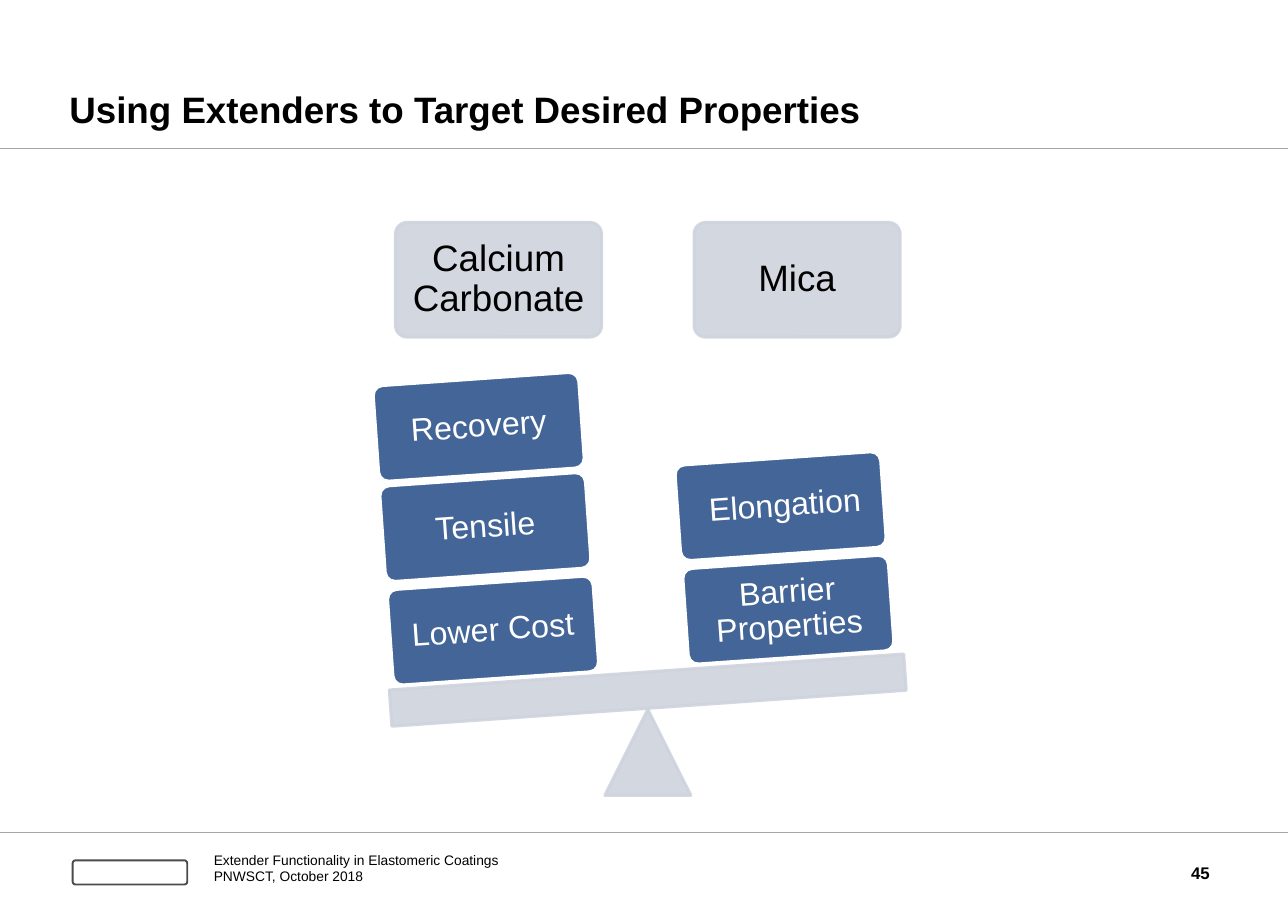
"""Build the slide that weighs two extenders on a tilted seesaw."""
from dataclasses import dataclass

from lxml import etree
from pptx import Presentation, util as u
from pptx.dml.color import RGBColor
from pptx.enum import shapes, text
from pptx.oxml.ns import qn

HUES = {"ink": "000000", "white": "FFFFFF", "pale": "CFD3DD",
        "blue": "436597", "rule": "A6A6A6", "mark": "4B4B4D"}
KIND = shapes.MSO_SHAPE
ALIGN = text.PP_ALIGN
ANCHOR = text.MSO_ANCHOR
TILT = 356


@dataclass
class Block:
    left: float
    top: float
    width: float
    height: float
    kind: int = KIND.ROUNDED_RECTANGLE
    fill: str = "pale"
    edge: str = "pale"
    weight: float = 2
    alpha: int = 100
    turn: float = 0
    round: float = 0.1
    words: str = ""
    size: float = 24
    ink: str = "ink"
    pad: float = 0.1
    shift: float = 0


@dataclass
class Rule:
    top: float
    weight: float


def hue(name: str) -> RGBColor:
    return RGBColor.from_string(HUES[name])


def fade(node, alpha: int) -> None:
    for color in node.iter(qn("a:srgbClr")):
        etree.SubElement(color, qn("a:alpha"), val=str(alpha * 1000))


def write(shape, words: str, *, size: float, ink: str = "ink", bold: bool = False,
          align=ALIGN.LEFT, anchor=ANCHOR.MIDDLE, pad: float = 0,
          shift: float = 0, space=None) -> None:
    frame = shape.text_frame
    frame.word_wrap = True
    frame.vertical_anchor = anchor
    frame.margin_left = u.Inches(pad + shift)
    frame.margin_top = frame.margin_right = frame.margin_bottom = u.Inches(pad)
    for num, line in enumerate(words.split("\n")):
        para = frame.add_paragraph() if num else frame.paragraphs[0]
        para.alignment = align
        if space:
            para.line_spacing = space
        run = para.add_run()
        run.text = line
        run.font.name = "Arial"
        run.font.size = u.Pt(size)
        run.font.bold = bold
        run.font.color.rgb = hue(ink)


def label(slide, left: float, top: float, width: float, height: float,
          words: str, **style) -> None:
    box = slide.shapes.add_textbox(*map(u.Inches, (left, top, width, height)))
    write(box, words, **style)


def draw(slide, block: Block) -> None:
    area = block.left, block.top, block.width, block.height
    shape = slide.shapes.add_shape(block.kind, *map(u.Inches, area))
    shape.shadow.inherit = False
    shape.rotation = block.turn
    if block.kind == KIND.ROUNDED_RECTANGLE:
        shape.adjustments[0] = block.round
    shape.fill.solid()
    shape.fill.fore_color.rgb = hue(block.fill)
    shape.line.color.rgb = hue(block.edge)
    shape.line.width = u.Pt(block.weight)
    if block.alpha < 100:
        fade(shape.element.spPr, block.alpha)
    if block.words:
        write(shape, block.words, size=block.size, ink=block.ink, align=ALIGN.CENTER,
              pad=block.pad, shift=block.shift, space=0.9)


def rule(slide, line: Rule, width: int) -> None:
    top = u.Inches(line.top)
    link = slide.shapes.add_connector(shapes.MSO_CONNECTOR.STRAIGHT, 0, top, width, top)
    link.line.color.rgb = hue("rule")
    link.line.width = u.Pt(line.weight)
    etree.SubElement(link.element.spPr, qn("a:effectLst"))


def head(left: float, words: str) -> Block:
    return Block(left, 2.02, 1.87, 1.04, alpha=90, words=words)


def weight(left: float, top: float, words: str, shift: float = 0) -> Block:
    return Block(left, top, 1.87, 0.87, fill="blue", edge="white", turn=TILT,
                 words=words, size=21, ink="white", pad=0.11, shift=shift)


RULES = [Rule(1.35, 0.75), Rule(7.56, 0.5)]
BLOCKS = [
    Block(0.66, 7.81, 1.04, 0.22, fill="white", edge="mark", weight=1.25, round=0.12),
    head(3.59, "Calcium Carbonate"),
    head(6.3, "Mica"),
    Block(5.49, 6.44, 0.78, 0.78, KIND.ISOSCELES_TRIANGLE, alpha=90),
    Block(3.54, 6.1, 4.68, 0.33, KIND.RECTANGLE, alpha=90, turn=TILT),
    weight(3.54, 5.29, "Lower Cost"),
    weight(3.47, 4.35, "Tensile"),
    weight(3.41, 3.44, "Recovery"),
    weight(6.22, 5.1, "Barrier Properties"),
    weight(6.15, 4.16, "Elongation", shift=0.08),
]


def main() -> None:
    deck = Presentation()
    deck.slide_width = u.Inches(11.69)
    deck.slide_height = u.Inches(8.27)
    slide = deck.slides.add_slide(deck.slide_layouts[6])
    for line in RULES:
        rule(slide, line, deck.slide_width)
    label(slide, 0.63, 0.32, 10.27, 0.87, "Using Extenders to Target Desired Properties",
          size=24, bold=True, anchor=ANCHOR.BOTTOM)
    for block in BLOCKS:
        draw(slide, block)
    label(slide, 1.94, 7.73, 4.91, 0.31,
          "Extender Functionality in Elastomeric Coatings\nPNWSCT, October 2018",
          size=9, space=u.Pt(10.4))
    label(slide, 10.09, 7.69, 0.89, 0.47, "45", size=11, bold=True, align=ALIGN.RIGHT)
    deck.save("out.pptx")


if __name__ == "__main__":
    main()
